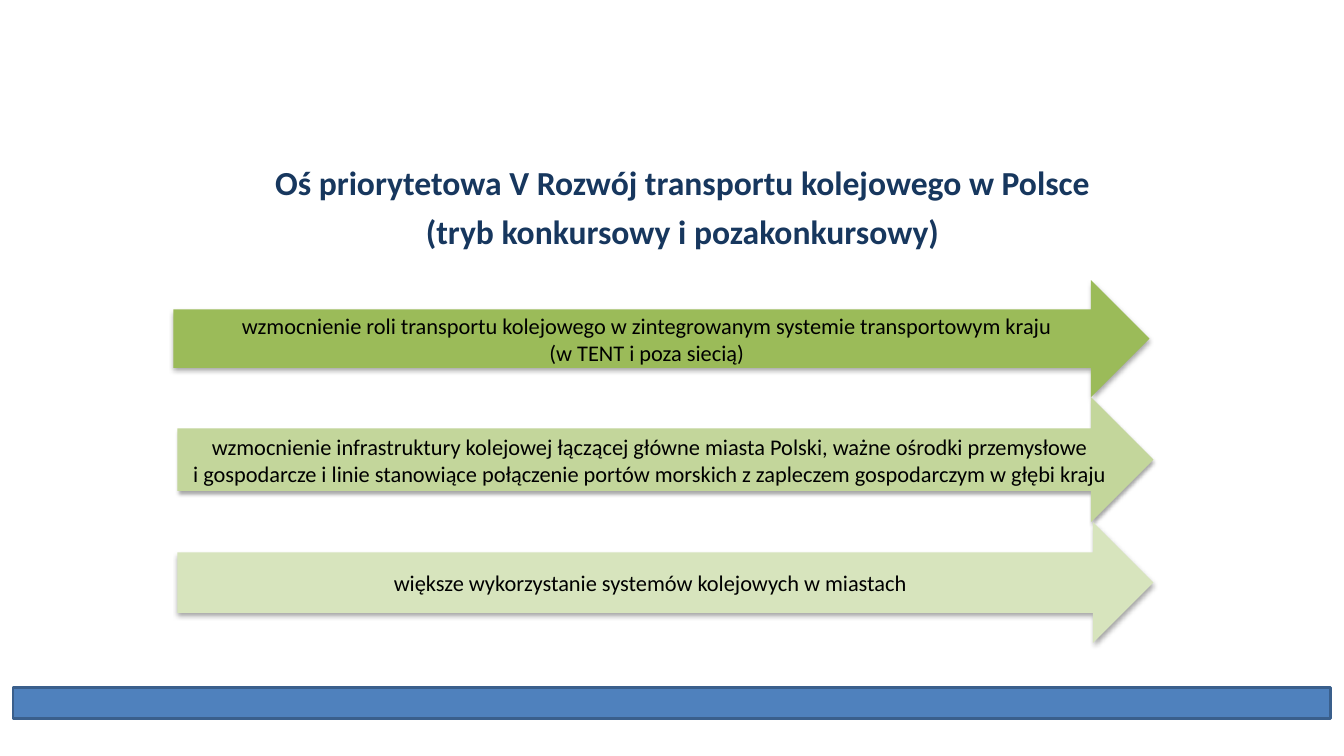
from dataclasses import dataclass

from lxml import etree
from pptx import Presentation
from pptx.dml.color import RGBColor
from pptx.enum.shapes import MSO_SHAPE as Shape
from pptx.enum.text import MSO_ANCHOR as Anchor, MSO_AUTO_SIZE as AutoSize, PP_ALIGN as Align
from pptx.oxml import parse_xml
from pptx.oxml.ns import nsdecls
from pptx.util import Inches, Pt

FONT = "Calibri"


@dataclass
class Goal:
    left: float
    top: float
    height: float
    fill: str
    paragraphs: list[str]


TITLE = [
    "Oś priorytetowa V Rozwój transportu kolejowego w Polsce",
    "(tryb konkursowy i pozakonkursowy)",
]
GOALS = [
    Goal(1.72, 2.78, 1.16, "9BBB59", [
        "wzmocnienie roli transportu kolejowego w zintegrowanym systemie transportowym kraju",
        "(w TENT i poza siecią)",
    ]),
    Goal(1.76, 3.94, 1.24, "C3D69B", [
        "wzmocnienie infrastruktury kolejowej łączącej główne miasta Polski, "
        "ważne ośrodki przemysłowe\n"
        "i gospodarcze i linie stanowiące połączenie portów morskich "
        "z zapleczem gospodarczym w głębi kraju",
    ]),
    Goal(1.76, 5.18, 1.2, "D7E4BD", [
        "większe wykorzystanie systemów kolejowych w miastach",
    ]),
]


def rgb(value: str) -> RGBColor:
    return RGBColor.from_string(value)


def write(tf, paragraphs: list[str], size: int, color: str,
          bold: bool = False, after: int = 0) -> None:
    """Fill a text frame with centred paragraphs."""
    tf.word_wrap = True
    for i, text in enumerate(paragraphs):
        p = tf.paragraphs[0] if i == 0 else tf.add_paragraph()
        p.text = text
        p.alignment = Align.CENTER
        p.space_after = Pt(after)
        p.font.name = FONT
        p.font.size = Pt(size)
        p.font.bold = bold
        p.font.color.rgb = rgb(color)


def add_shadow(sp) -> None:
    """Give a shape a soft shadow straight below it."""
    sp.shadow.inherit = False
    effects = sp._element.spPr.find(etree.QName(
        "http://schemas.openxmlformats.org/drawingml/2006/main", "effectLst"))
    effects.append(parse_xml(
        f'<a:outerShdw {nsdecls("a")} blurRad="{Pt(3.1)}" dist="{Pt(1.8)}" '
        'dir="5400000" rotWithShape="0"><a:srgbClr val="000000">'
        '<a:alpha val="35000"/></a:srgbClr></a:outerShdw>'))


def add_goal(s, goal: Goal) -> None:
    sp = s.shapes.add_shape(Shape.RIGHT_ARROW, Inches(goal.left), Inches(goal.top),
                            Inches(9.68), Inches(goal.height))
    sp.fill.solid()
    sp.fill.fore_color.rgb = rgb(goal.fill)
    sp.line.fill.background()
    add_shadow(sp)
    tf = sp.text_frame
    tf.vertical_anchor = Anchor.MIDDLE
    tf.margin_left = tf.margin_right = tf.margin_top = tf.margin_bottom = Inches(0.07)
    write(tf, goal.paragraphs, 16, "000000")


def main() -> None:
    prs = Presentation()
    prs.slide_width, prs.slide_height = Inches(13.33), Inches(7.5)
    s = prs.slides.add_slide(prs.slide_layouts[5])

    # Title
    title = s.shapes.title
    title.left, title.top = Inches(1.78), Inches(1.56)
    title.width, title.height = Inches(9.98), Inches(1.1)
    tf = title.text_frame
    tf.auto_size = AutoSize.NONE
    tf.vertical_anchor = Anchor.TOP
    write(tf, TITLE, 24, "17375E", bold=True, after=6)

    # Footer bar
    bar = s.shapes.add_shape(Shape.FLOWCHART_PROCESS, Inches(0.13), Inches(6.82),
                             Inches(13.07), Inches(0.31))
    bar.shadow.inherit = False
    bar.fill.solid()
    bar.fill.fore_color.rgb = rgb("4F81BD")
    bar.line.color.rgb = rgb("3A5F8C")
    bar.line.width = Pt(2)

    # Goal arrows
    for goal in GOALS:
        add_goal(s, goal)

    prs.save("out.pptx")


if __name__ == "__main__":
    main()
